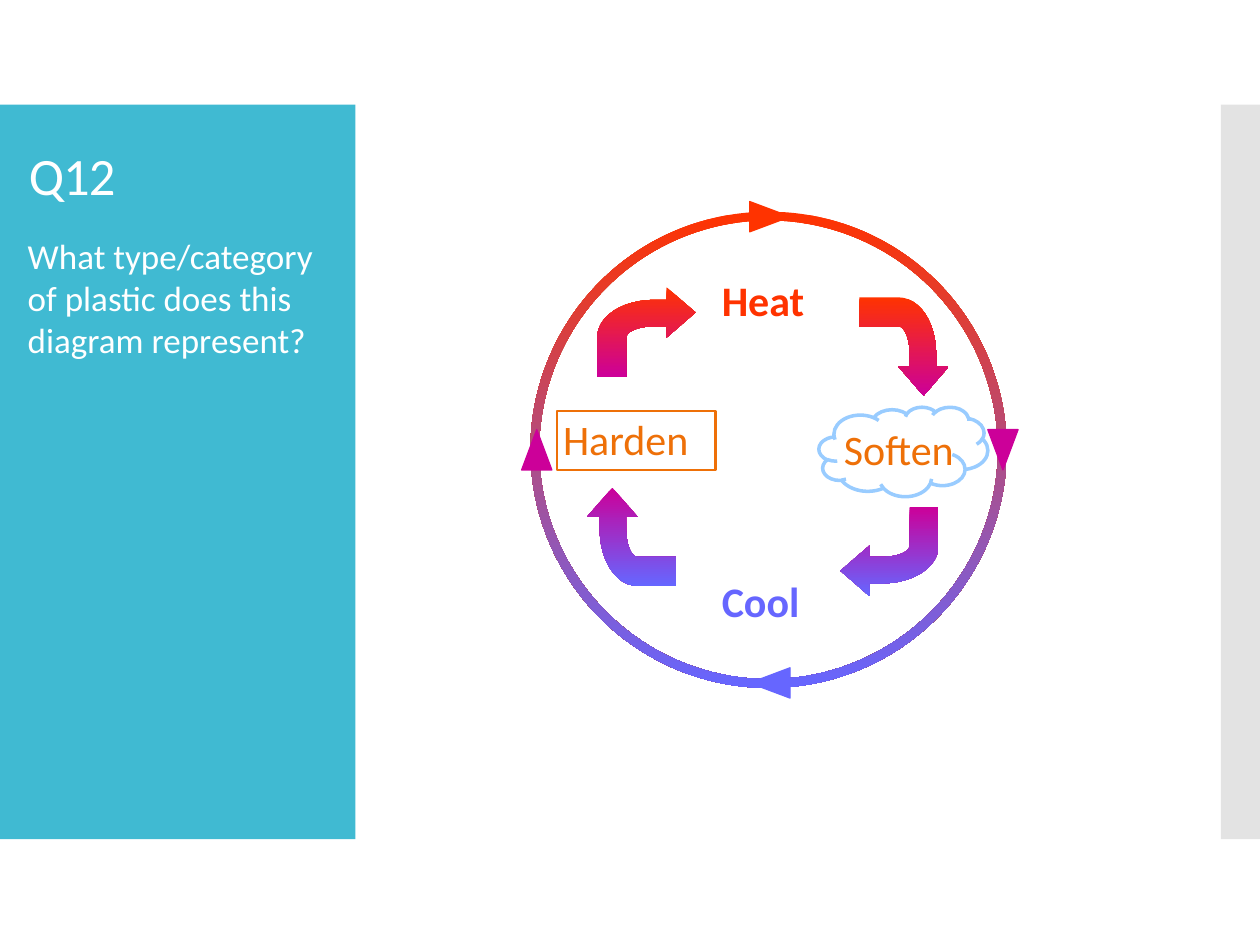
from math import cos, sin, radians

from pptx import Presentation
from pptx.dml.color import RGBColor
from pptx.enum.shapes import MSO_SHAPE as Geo
from pptx.enum.text import MSO_ANCHOR as Anchor, MSO_AUTO_SIZE as Fit, PP_ALIGN as Align
from pptx.oxml.ns import qn
from pptx.util import Inches, Pt
from lxml.etree import SubElement

TEAL = RGBColor(0x40, 0xBA, 0xD2)
GREY = RGBColor(0xC8, 0xC8, 0xC8)
WHITE = RGBColor(0xFF, 0xFF, 0xFF)
RED = RGBColor(0xFF, 0x33, 0x00)
PINK = RGBColor(0xCC, 0x00, 0x99)
BLUE = RGBColor(0x66, 0x66, 0xFF)
AMBER = RGBColor(0xEE, 0x70, 0x08)
SKY = RGBColor(0x99, 0xCC, 0xFF)

# Bent arrow, pointing right, measured from the corner of its box
BEND_W, BEND_H = 0.79, 0.71


def curve(a, b, c, d, steps=12):
    """Points along a cubic curve from a to d."""
    pts = []
    for i in range(steps + 1):
        t = i / steps
        u = 1 - t
        pts.append(tuple(u**3 * p + 3 * u * u * t * q + 3 * u * t * t * r + t**3 * s
                         for p, q, r, s in zip(a, b, c, d)))
    return pts


BEND = [(0.78, 0.2), (0.55, 0), (0.55, 0.1),
        *curve((0.45, 0.1), (0.2, 0.1), (0, 0.23), (0, 0.4)),
        (0, 0.71), (0.23, 0.71),
        *curve((0.23, 0.4), (0.23, 0.35), (0.33, 0.31), (0.45, 0.31)),
        (0.55, 0.31), (0.55, 0.4)]


def write(frame, text, size=24, color=AMBER, bold=False, anchor=Anchor.TOP,
          lead=None, track=None):
    frame.word_wrap = True
    frame.auto_size = Fit.NONE
    frame.vertical_anchor = anchor
    para = frame.paragraphs[0]
    para.alignment = Align.LEFT
    if lead:
        para.line_spacing = lead
    run = para.add_run()
    run.text = text
    font = run.font
    font.name, font.size, font.bold = "Calibri", Pt(size), bold
    font.color.rgb = color
    if track:
        run._r.get_or_add_rPr().set("spc", str(track))
    return para


class Board:
    """Current slide and the way its parts are styled."""

    def __init__(self, slide):
        self.slide = slide
        self.shapes = slide.shapes

    def paint(self, item, fill=None, line=None, width=0.75):
        """Fill with one colour, or with a (top, bottom) blend."""
        item.shadow.inherit = False
        if fill is None:
            item.fill.background()
        elif isinstance(fill, RGBColor):
            item.fill.solid()
            item.fill.fore_color.rgb = fill
        else:
            item.fill.gradient()
            item.fill.gradient_angle = 270
            for stop, color in zip(item.fill.gradient_stops, fill):
                stop.color.rgb = color
        if line is None:
            item.line.fill.background()
        else:
            item.line.color.rgb = line
            item.line.width = Pt(width)
        return item

    def shape(self, geo, x, y, w, h, turn=0, **style):
        item = self.shapes.add_shape(geo, Inches(x), Inches(y), Inches(w), Inches(h))
        item.rotation = turn
        return self.paint(item, **style)

    def bend(self, x, y, turns, blend):
        """Bent arrow turned clockwise by quarter turns about its middle."""
        mx, my = x + BEND_W / 2, y + BEND_H / 2
        pts = []
        for px, py in BEND:
            dx, dy = px - BEND_W / 2, py - BEND_H / 2
            for _ in range(turns):
                dx, dy = -dy, dx
            pts.append((Inches(mx + dx), Inches(my + dy)))
        pen = self.shapes.build_freeform(*pts[0])
        pen.add_line_segments(pts[1:], close=True)
        return self.paint(pen.convert_to_shape(), fill=blend)

    def label(self, text, x, y, w, **style):
        box = self.shapes.add_textbox(Inches(x), Inches(y), Inches(w), Inches(0.5))
        write(box.text_frame, text, **style)

    def holder(self, item, x, y, w, h, text, **style):
        """Place a template placeholder in front of the panels."""
        item.left, item.top = Inches(x), Inches(y)
        item.width, item.height = Inches(w), Inches(h)
        self.shapes._spTree.append(item._element)
        return write(item.text_frame, text, **style)


def main():
    deck = Presentation()
    deck.slide_width, deck.slide_height = Inches(10), Inches(7.5)
    slide = deck.slides.add_slide(deck.slide_layouts[1])
    board = Board(slide)
    title, body = slide.placeholders

    # Side panels
    board.shape(Geo.RECTANGLE, 0, 0.83, 2.82, 5.83, fill=TEAL)
    edge = board.shape(Geo.RECTANGLE, 9.69, 0.83, 0.31, 5.83, fill=GREY)
    tint = edge._element.spPr.find(qn("a:solidFill"))[0]
    SubElement(tint, qn("a:alpha")).set("val", "50000")

    # Question
    board.holder(title, 0.13, 0.79, 9, 1.25, "Q12", size=30, color=WHITE,
                 anchor=Anchor.MIDDLE, lead=0.9, track=-60)
    para = board.holder(body, 0.12, 1.81, 2.57, 1.45,
                        "What type/category of plastic does this diagram represent?",
                        size=20, color=WHITE)
    props = para._p.get_or_add_pPr()
    props.set("marL", "0")
    props.set("indent", "0")
    SubElement(props, qn("a:buNone"))

    # Inner cycle
    board.label("Heat", 5.63, 2.13, 1.02, color=RED, bold=True)
    board.label("Cool", 5.63, 4.52, 1.02, color=BLUE, bold=True)
    board.label("Harden", 4.37, 3.23, 1.42)
    for x, y, turns, blend in ((6.78, 2.4, 1, (RED, PINK)), (4.74, 2.28, 0, (RED, PINK)),
                               (6.66, 4.02, 2, (PINK, BLUE)), (4.62, 3.9, 3, (PINK, BLUE))):
        board.bend(x, y, turns, blend)
    board.shape(Geo.CLOUD, 6.5, 3.23, 1.34, 0.71, line=SKY, width=2)
    board.shape(Geo.RECTANGLE, 4.42, 3.26, 1.26, 0.47, line=AMBER, width=1.3)

    # Outer ring, with a head at each quarter
    ring = board.shape(Geo.DONUT, 4.21, 1.68, 3.78, 3.78, fill=(RED, BLUE))
    ring.adjustments[0] = 0.07 / 3.78
    board.label("Soften", 6.6, 3.31, 1.26)
    mid_x, mid_y, reach = 6.11, 3.57, 1.85
    head_w, head_h = 0.24, 0.32
    for turn, color in ((90, RED), (180, PINK), (270, BLUE), (0, PINK)):
        angle = radians(turn)
        x = mid_x - reach * cos(angle)
        y = mid_y - reach * sin(angle)
        if turn in (90, 270):
            x, y = mid_x, mid_y - reach * sin(angle)
        else:
            y = mid_y
        board.shape(Geo.ISOSCELES_TRIANGLE, x - head_w / 2, y - head_h / 2,
                    head_w, head_h, turn=turn, fill=color, line=color)

    deck.save("out.pptx")


if __name__ == "__main__":
    main()
